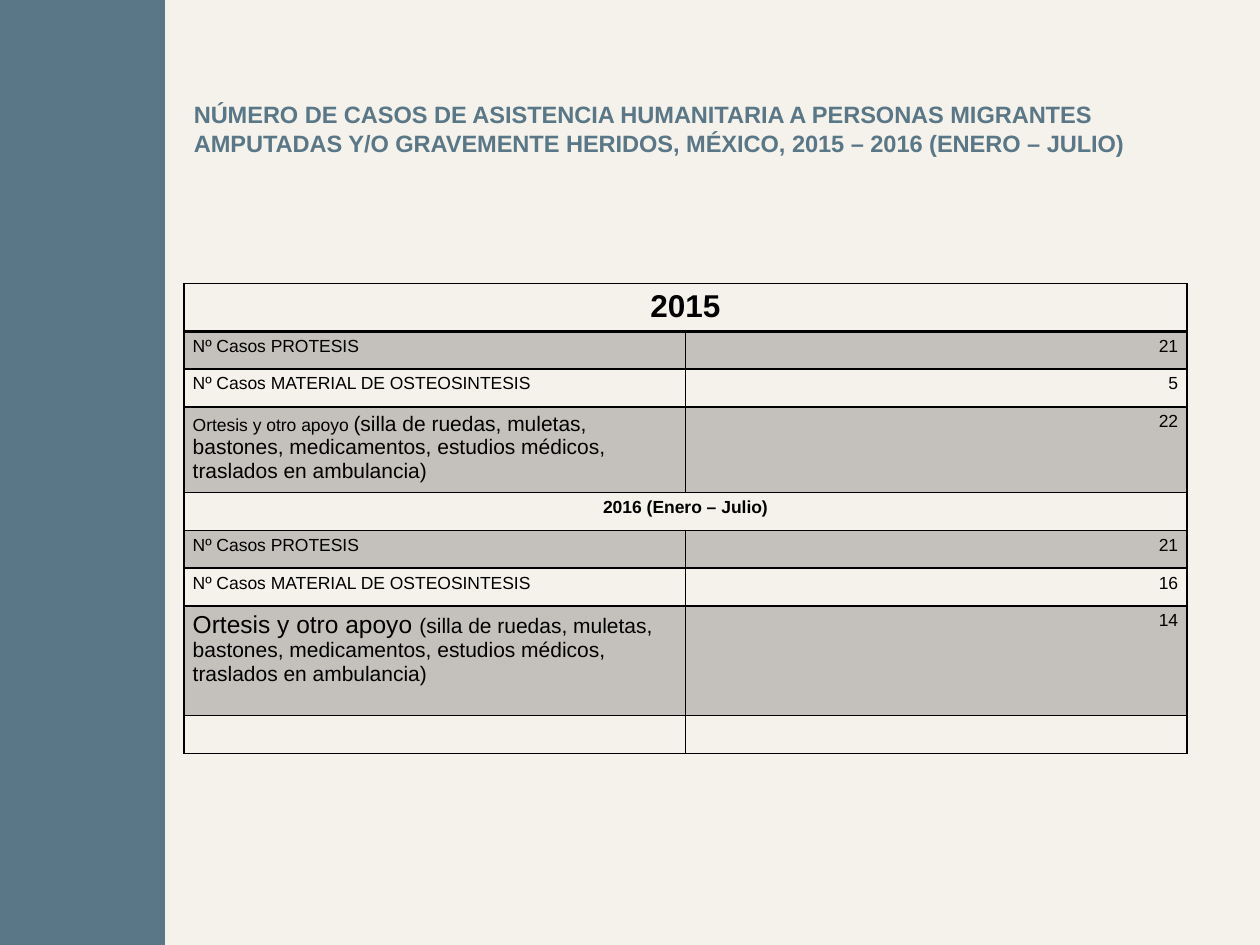
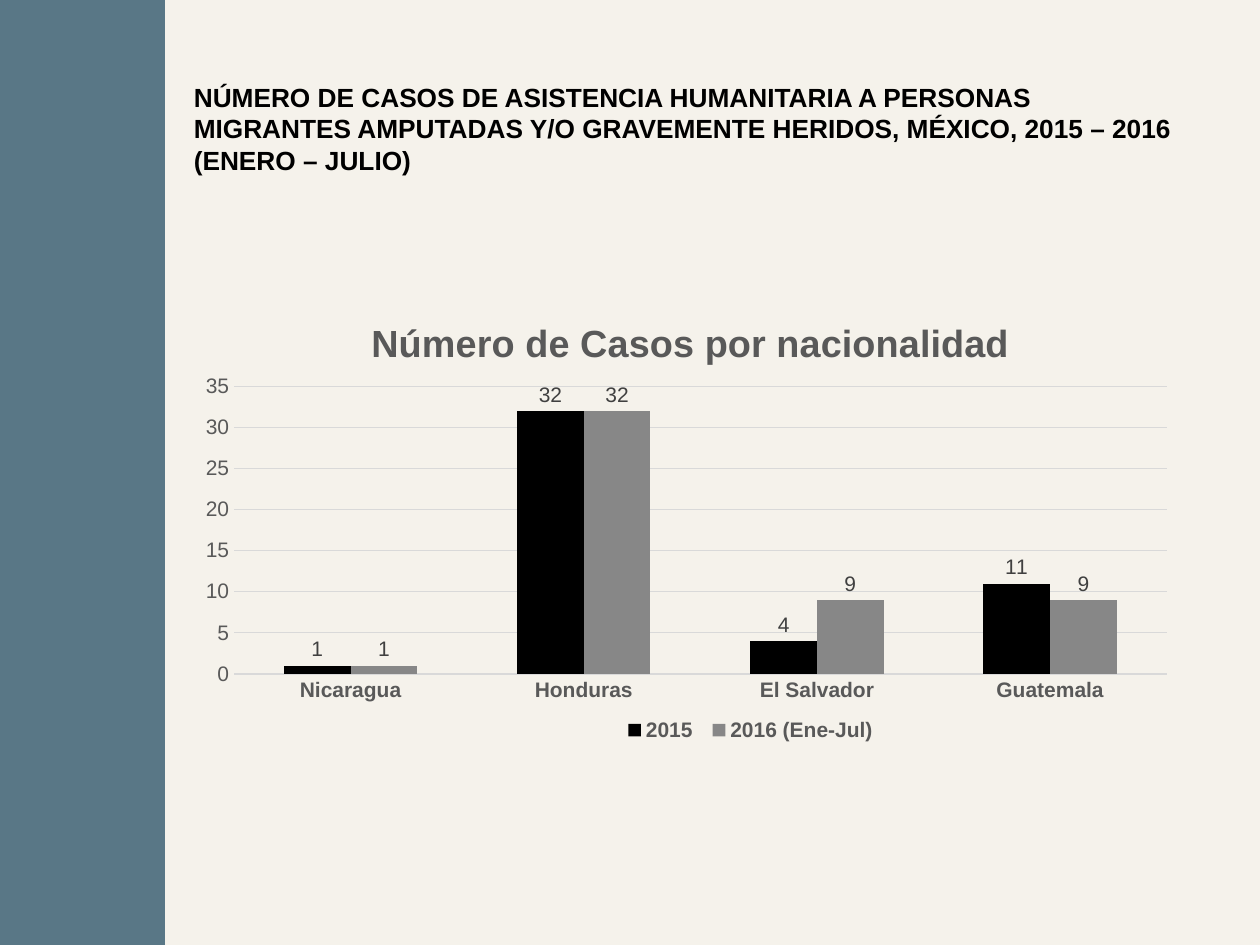
from dataclasses import dataclass

from lxml.etree import SubElement
from pptx import Presentation
from pptx.chart.data import CategoryChartData
from pptx.dml.color import RGBColor
from pptx.enum.chart import XL_CHART_TYPE, XL_LABEL_POSITION, XL_LEGEND_POSITION, XL_TICK_MARK
from pptx.enum.shapes import MSO_SHAPE
from pptx.enum.text import MSO_ANCHOR, PP_ALIGN
from pptx.oxml import parse_xml
from pptx.oxml.ns import nsdecls, qn
from pptx.util import Inches, Pt


@dataclass(frozen=True)
class Theme:
    font: str = "Arial"
    paper: str = "F5F2EB"
    slate: str = "597786"
    black: str = "000000"
    bar_gray: str = "878787"
    axis_gray: str = "595959"
    label_gray: str = "404040"
    grid_gray: str = "D9D9D9"
    chart_title: float = 21.6
    year: float = 18
    large: float = 14
    medium: float = 12
    small: float = 10


theme = Theme()


def style(font, size, color=theme.black, bold=False):
    font.name = theme.font
    font.size = Pt(size)
    font.bold = bold
    font.color.rgb = RGBColor.from_string(color)


def place(element, index, **shares):
    for old in element.findall(qn("c:layout")):
        element.remove(old)
    layout = parse_xml(f"<c:layout {nsdecls('c')}><c:manualLayout/></c:layout>")
    manual = layout[0]
    if "inner" in shares:
        SubElement(manual, qn("c:layoutTarget")).set("val", shares.pop("inner"))
    for key in ("xMode", "yMode"):
        SubElement(manual, qn(f"c:{key}")).set("val", "edge")
    for key, share in shares.items():
        SubElement(manual, qn(f"c:{key}")).set("val", str(share))
    element.insert(index, layout)


prs = Presentation()
prs.slide_width, prs.slide_height = Inches(10), Inches(7.5)
W, H = prs.slide_width, prs.slide_height
band_width = int(W * 0.131)
content_left, content_top = int(W * 0.146), int(H * 0.3)
content_width = int(W * 0.796)
heading = (
    "NÚMERO DE CASOS DE ASISTENCIA HUMANITARIA A PERSONAS MIGRANTES AMPUTADAS "
    "Y/O GRAVEMENTE HERIDOS, MÉXICO, 2015 – 2016 (ENERO – JULIO)"
)

for size, color in ((13.5, theme.slate), (15, theme.black)):
    s = prs.slides.add_slide(prs.slide_layouts[6])
    s.background.fill.solid()
    s.background.fill.fore_color.rgb = RGBColor.from_string(theme.paper)
    sp = s.shapes.add_shape(MSO_SHAPE.RECTANGLE, 0, 0, band_width, H)
    sp.shadow.inherit = False
    sp.fill.solid()
    sp.fill.fore_color.rgb = RGBColor.from_string(theme.slate)
    sp.line.fill.background()
    sp = s.shapes.add_textbox(int(W * 0.144), int(H * 0.112), int(W * 0.797), int(H * 0.048))
    tf = sp.text_frame
    tf.word_wrap = True
    tf.vertical_anchor = MSO_ANCHOR.MIDDLE
    p = tf.paragraphs[0]
    p.text = heading
    style(p.runs[0].font, size, color, True)

table_slide, chart_slide = prs.slides

prosthesis = "Nº Casos PROTESIS"
implants = "Nº Casos MATERIAL DE OSTEOSINTESIS"
support = "Ortesis y otro apoyo "
support_detail = (
    "(silla de ruedas, muletas, bastones, medicamentos, estudios médicos, "
    "traslados en ambulancia)"
)
rows = [
    (0.38, [("2015", theme.year)], None),
    (0.3, [(prosthesis, theme.small)], "21"),
    (0.3, [(implants, theme.small)], "5"),
    (0.68, [(support, theme.small), (support_detail, theme.medium)], "22"),
    (0.3, [("2016 (Enero – Julio)", theme.small)], None),
    (0.3, [(prosthesis, theme.small)], "21"),
    (0.3, [(implants, theme.small)], "16"),
    (0.87, [(support, theme.large), (support_detail, theme.medium)], "14"),
    (0.3, [], ""),
]
table_height = Inches(sum(height for height, _, _ in rows))
table = table_slide.shapes.add_table(
    len(rows), 2, content_left, content_top, content_width, table_height
).table
table.first_row = table.horz_banding = False
for column in table.columns:
    column.width = content_width // 2

for i, (height, label, count) in enumerate(rows):
    table.rows[i].height = Inches(height)
    is_year = count is None
    if is_year:
        table.cell(i, 0).merge(table.cell(i, 1))
    count_runs = [(count, theme.small)] if count else []
    for j, runs in enumerate((label, count_runs)):
        cell = table.cell(i, j)
        cell.margin_left = cell.margin_right = Inches(0.07)
        cell.margin_top = cell.margin_bottom = Inches(0.04)
        p = cell.text_frame.paragraphs[0]
        p.alignment = PP_ALIGN.CENTER if is_year else (PP_ALIGN.LEFT, PP_ALIGN.RIGHT)[j]
        for text, size in runs:
            r = p.add_run()
            r.text = text
            style(r.font, size, bold=is_year)
        SubElement(p._p, qn("a:endParaRPr")).set("sz", str(theme.small * 100))
        if i in (1, 3, 5, 7):
            cell.fill.solid()
            cell.fill.fore_color.rgb = RGBColor.from_string(theme.black)
            shade = cell._tc.tcPr.find(".//" + qn("a:srgbClr"))
            SubElement(shade, qn("a:alpha")).set("val", "20000")
        else:
            cell.fill.background()
        for k, side in enumerate("LRTB"):
            points = 2 if (i, side) in ((0, "B"), (1, "T")) else 1
            cell._tc.tcPr.insert(k, parse_xml(
                f'<a:ln{side} {nsdecls("a")} w="{Pt(points)}"><a:solidFill>'
                f'<a:srgbClr val="{theme.black}"/></a:solidFill></a:ln{side}>'
            ))

data = CategoryChartData()
data.categories = ["Nicaragua", "Honduras", "El Salvador", "Guatemala"]
data.add_series("2015", (1, 32, 4, 11))
data.add_series("2016 (Ene-Jul)", (1, 32, 9, 9))
chart = chart_slide.shapes.add_chart(
    XL_CHART_TYPE.COLUMN_CLUSTERED, content_left, content_top, content_width, int(H * 0.495), data
).chart
style(chart.font, theme.small)

chart.has_title = True
p = chart.chart_title.text_frame.paragraphs[0]
p.text = "Número de Casos por nacionalidad"
style(p.runs[0].font, theme.chart_title, theme.axis_gray, True)
chart.chart_title.include_in_layout = False
place(chart.chart_title._element, 1, x=0.18, y=0.06)

chart.has_legend = True
chart.legend.position = XL_LEGEND_POSITION.BOTTOM
chart.legend.include_in_layout = False
style(chart.legend.font, theme.medium, theme.axis_gray, True)
place(chart.legend._element, 1, x=0.43, y=0.92, w=0.27, h=0.07)
place(chart._chartSpace.chart.plotArea, 0, inner="inner", x=0.05, y=0.22, w=0.93, h=0.615)

for axis, bold in ((chart.category_axis, True), (chart.value_axis, False)):
    axis.major_tick_mark = axis.minor_tick_mark = XL_TICK_MARK.NONE
    axis.format.line.fill.background()
    style(axis.tick_labels.font, theme.medium, theme.axis_gray, bold)
axis = chart.value_axis
axis.minimum_scale, axis.maximum_scale, axis.major_unit = 0, 35, 5
axis.has_major_gridlines = True
grid = axis.major_gridlines.format.line
grid.width = Pt(0.75)
grid.color.rgb = RGBColor.from_string(theme.grid_gray)

plot = chart.plots[0]
plot.gap_width, plot.overlap = 150, 0
plot.vary_by_categories = False
for series, color in zip(plot.series, (theme.black, theme.bar_gray)):
    series.format.fill.solid()
    series.format.fill.fore_color.rgb = RGBColor.from_string(color)
    labels = series.data_labels
    labels.show_value = True
    labels.position = XL_LABEL_POSITION.OUTSIDE_END
    style(labels.font, theme.medium, theme.label_gray)

prs.save("out.pptx")
